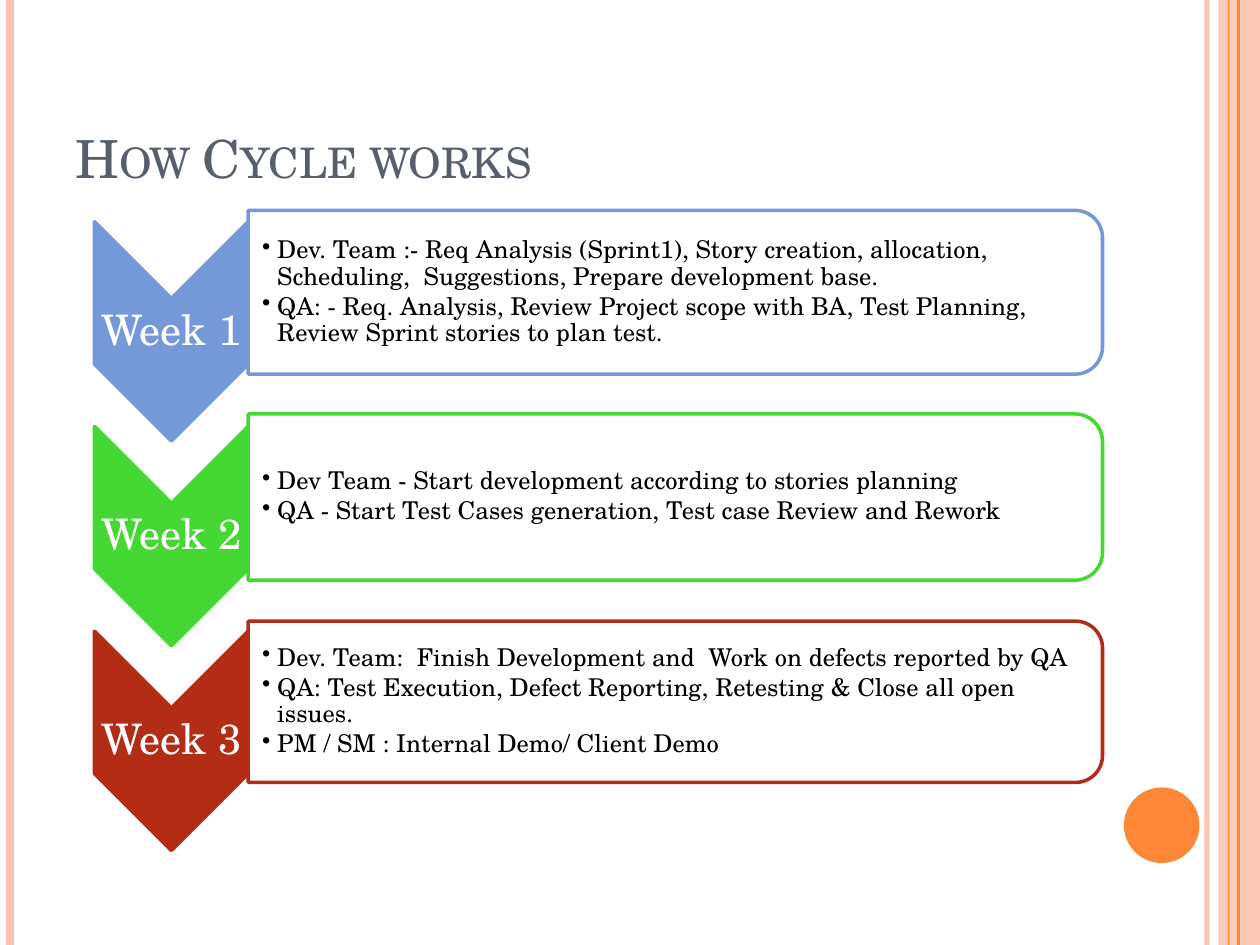
from dataclasses import dataclass
from typing import NamedTuple

from lxml.etree import SubElement
from pptx import Presentation
from pptx.dml.color import RGBColor
from pptx.enum.shapes import MSO_CONNECTOR as Link, MSO_SHAPE as Form
from pptx.enum.text import MSO_ANCHOR as Anchor, PP_ALIGN as Align
from pptx.oxml.ns import qn
from pptx.util import Inches, Pt

PEACH = RGBColor(0xFE, 0xC3, 0xAE)
ORANGE = RGBColor(0xFE, 0x86, 0x37)
SLATE = RGBColor(0x57, 0x5F, 0x6D)
BLUE = RGBColor(0x75, 0x98, 0xD9)
GREEN = RGBColor(0x45, 0xD8, 0x34)
RED = RGBColor(0xB3, 0x2C, 0x16)
WHITE = RGBColor(0xFF, 0xFF, 0xFF)
BLACK = RGBColor(0, 0, 0)

FACE = "TeX Gyre Schola"
COLS, ROWS = 100, 75
WIDE, HIGH = Inches(10), Inches(7.5)
PITCH = 16.25


class Box(NamedTuple):
    left: float
    top: float
    width: float
    height: float

    def place(self) -> tuple[int, int, int, int]:
        col, row = WIDE / COLS, HIGH / ROWS
        return (round(self.left * col), round(self.top * row),
                round(self.width * col), round(self.height * row))

    def turn(self) -> "Box":
        shift = (self.width - self.height) / 2
        return Box(self.left + shift, self.top - shift, self.height, self.width)


@dataclass
class Rule:
    col: float
    color: RGBColor
    weight: float
    alpha: int = 100


@dataclass
class Week:
    name: str
    color: RGBColor
    height: float
    tasks: list[str]


RULES = [
    Rule(95.8, PEACH, 3, 93),
    Rule(0.8, PEACH, 4.5),
    Rule(98.3, ORANGE, 1.5),
    Rule(97.5, ORANGE, 0.75),
]

WEEKS = [
    Week("Week 1", BLUE, 13, [
        "Dev. Team :- Req Analysis (Sprint1), Story creation, allocation,  "
        "Scheduling,  Suggestions, Prepare development base.",
        "QA: - Req. Analysis, Review Project scope with BA, Test Planning, "
        "Review Sprint stories to plan test.",
    ]),
    Week("Week 2", GREEN, 13.2, [
        "Dev Team - Start development according to stories planning",
        "QA - Start Test Cases generation, Test case Review and Rework",
    ]),
    Week("Week 3", RED, 12.8, [
        "Dev. Team:  Finish Development and  Work on defects reported by QA",
        "QA: Test Execution, Defect Reporting, Retesting & Close all open issues.",
        "PM / SM : Internal Demo/ Client Demo",
    ]),
]


def fade(part, alpha: int) -> None:
    if alpha < 100:
        for tint in part.iter(qn("a:srgbClr")):
            SubElement(tint, qn("a:alpha")).set("val", str(alpha * 1000))


def draw_rule(slide, rule: Rule) -> None:
    x = round(WIDE * rule.col / COLS)
    line = slide.shapes.add_connector(Link.STRAIGHT, x, 0, x, HIGH)
    line.line.color.rgb = rule.color
    line.line.width = Pt(rule.weight)
    props = line._element.spPr
    fade(props, rule.alpha)
    SubElement(props, qn("a:effectLst"))


def draw_shape(slide, form: Form, box: Box, fill: RGBColor,
               edge: RGBColor | None = None, alpha: int = 100):
    shape = slide.shapes.add_shape(form, *box.place())
    shape.shadow.inherit = False
    shape.fill.solid()
    shape.fill.fore_color.rgb = fill
    fade(shape._element.spPr, alpha)
    if edge is None:
        shape.line.fill.background()
    else:
        shape.line.color.rgb = edge
        shape.line.width = Pt(2)
    return shape


def draw_text(slide, box: Box, lines: list[str], size: float, color: RGBColor,
              inset: tuple[float, float], anchor: Anchor = Anchor.MIDDLE) -> list:
    frame = slide.shapes.add_textbox(*box.place()).text_frame
    frame.word_wrap = True
    frame.vertical_anchor = anchor
    frame.margin_left = Inches(inset[0])
    frame.margin_right = frame.margin_top = frame.margin_bottom = Inches(inset[1])
    frame.text = "\n".join(lines)
    for para in frame.paragraphs:
        para.font.name = FACE
        para.font.size = Pt(size)
        para.font.color.rgb = color
    return list(frame.paragraphs)


def add_bullet(para) -> None:
    props = para._p.get_or_add_pPr()
    props.set("marL", str(Inches(0.12)))
    props.set("indent", str(-Inches(0.12)))
    mark = props.makeelement(qn("a:buChar"), {"char": "•"})
    props.find(qn("a:defRPr")).addprevious(mark)


def draw_week(slide, week: Week, index: int) -> None:
    drop = index * PITCH
    arrow = Box(7.5, 17.6 + drop, 12.2, 17.4)
    draw_shape(slide, Form.CHEVRON, arrow.turn(), week.color, week.color).rotation = 90

    label = Box(7.5, 23.7 + drop, 12.2, 5.2)
    for para in draw_text(slide, label, [week.name], 24, WHITE, (0.02, 0.02)):
        para.alignment = Align.CENTER
        para.line_spacing = 0.9

    card = Box(19.7, 23.2 + drop - week.height / 2, 67.8, week.height)
    draw_shape(slide, Form.ROUND_2_SAME_RECTANGLE, card.turn(),
               WHITE, week.color, 90).rotation = 90

    body = Box(19.7, 17.35 + drop, 67.2, 11.7)
    for para in draw_text(slide, body, week.tasks, 14, BLACK, (0.11, 0.01)):
        para.line_spacing = 0.9
        para.space_after = Pt(2)
        add_bullet(para)


def main() -> None:
    deck = Presentation()
    deck.slide_width, deck.slide_height = WIDE, HIGH
    slide = deck.slides.add_slide(deck.slide_layouts[6])

    draw_shape(slide, Form.RECTANGLE, Box(96.7, 0, 3.3, ROWS), PEACH, alpha=87)
    for rule in RULES:
        draw_rule(slide, rule)
    draw_shape(slide, Form.OVAL, Box(89.2, 62.5, 6, 6), ORANGE)

    title = draw_text(slide, Box(5, 3, 81.7, 12.5), ["How Cycle works"],
                      30, SLATE, (0.1, 0.05), Anchor.BOTTOM)[0]
    title.font._element.set("cap", "small")

    for index, week in enumerate(WEEKS):
        draw_week(slide, week, index)
    deck.save("out.pptx")


if __name__ == "__main__":
    main()
